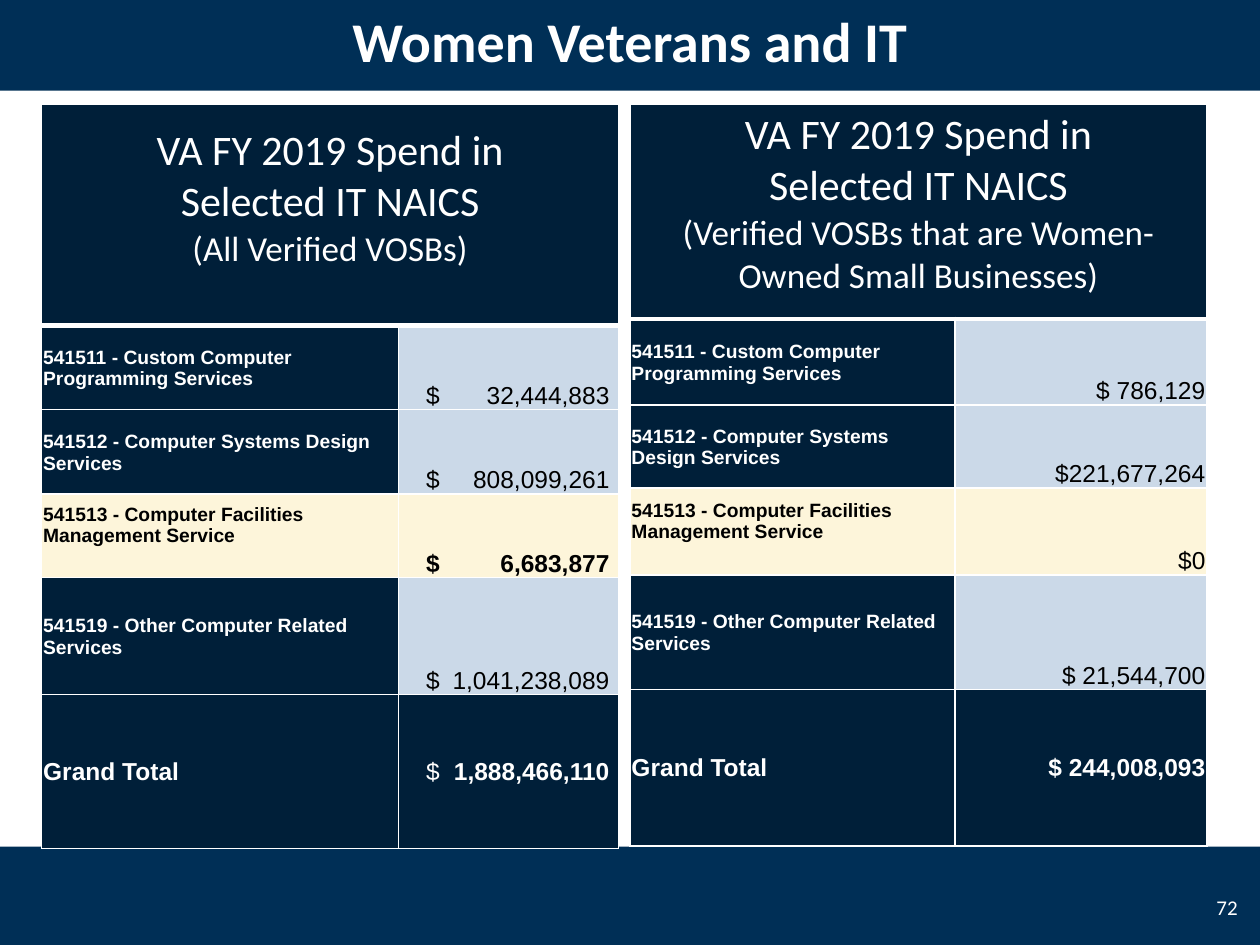
from lxml import etree
from pptx import Presentation
from pptx.dml.color import RGBColor
from pptx.enum.shapes import MSO_SHAPE
from pptx.enum.text import MSO_ANCHOR, PP_ALIGN
from pptx.oxml.ns import qn
from pptx.util import Cm, Pt

BAND = RGBColor(0x00, 0x2F, 0x56)
NAVY = RGBColor(0x00, 0x1F, 0x39)
PALE = RGBColor(0xCB, 0xD9, 0xE8)
CREAM = RGBColor(0xFD, 0xF5, 0xDA)
WHITE = RGBColor(0xFF, 0xFF, 0xFF)
BLACK = RGBColor(0x00, 0x00, 0x00)

RECTANGLE = MSO_SHAPE.RECTANGLE
LEFT, CENTER, RIGHT = PP_ALIGN.LEFT, PP_ALIGN.CENTER, PP_ALIGN.RIGHT
TOP, MIDDLE, BOTTOM = MSO_ANCHOR.TOP, MSO_ANCHOR.MIDDLE, MSO_ANCHOR.BOTTOM

SLIDE_WIDTH, SLIDE_HEIGHT = 25.4, 19.05
BAND_HEIGHT = 2.03
TITLE_TOP = -0.2
TABLE_TOP = 2.11

LABELS = [
    "541511 - Custom Computer Programming Services",
    "541512 - Computer Systems Design Services",
    "541513 - Computer Facilities Management Service",
    "541519 - Other Computer Related Services",
    "Grand Total",
]
HIGHLIGHT_ROW, TOTAL_ROW = 3, 5


class SpendPage:
    heading_font = "Calibri"
    body_font = "Arial"

    def __init__(self, deck):
        self.page = deck.slides.add_slide(deck.slide_layouts[6])

    def band(self, top):
        shape = self.page.shapes.add_shape(
            RECTANGLE, 0, Cm(top), Cm(SLIDE_WIDTH), Cm(BAND_HEIGHT))
        shape.shadow.inherit = False
        shape.fill.solid()
        shape.fill.fore_color.rgb = BAND
        shape.line.fill.background()

    def styled_run(self, para, text, size, font, color, bold=False):
        run = para.add_run()
        run.text = text
        run.font.size = Pt(size)
        run.font.name = font
        run.font.bold = bold
        run.font.color.rgb = color

    def text(self, place, text, size, align, bold=False):
        box = self.page.shapes.add_textbox(*(Cm(length) for length in place))
        frame = box.text_frame
        frame.word_wrap = True
        frame.vertical_anchor = MIDDLE
        para = frame.paragraphs[0]
        para.alignment = align
        self.styled_run(para, text, size, self.heading_font, WHITE, bold)

    def style_cell(self, cell, fill, anchor, margins, bottom_border=1):
        """Margins are left, top, right and bottom, in centimetres."""
        cell.vertical_anchor = anchor
        (cell.margin_left, cell.margin_top,
         cell.margin_right, cell.margin_bottom) = (Cm(m) for m in margins)
        properties = cell._tc.get_or_add_tcPr()
        for side in ("lnL", "lnR", "lnT", "lnB"):
            width = bottom_border if side == "lnB" else 1
            line = etree.SubElement(properties, qn("a:" + side), w=str(Pt(width)))
            solid = etree.SubElement(line, qn("a:solidFill"))
            etree.SubElement(solid, qn("a:srgbClr"), val=str(WHITE))
        cell.fill.solid()
        cell.fill.fore_color.rgb = fill

    def header(self, table, lines, anchor, bottom_margin):
        first, last = table.cell(0, 0), table.cell(0, 1)
        first.merge(last)
        for cell in (first, last):
            self.style_cell(cell, NAVY, anchor, (0.18, 0.1, 0.18, bottom_margin), 3)
        frame = first.text_frame
        for index, (line, size) in enumerate(zip(lines, (24, 24, 20))):
            para = frame.add_paragraph() if index else frame.paragraphs[0]
            para.alignment = CENTER
            self.styled_run(para, line, size, self.heading_font, WHITE)

    def label(self, cell, text, row):
        highlighted = row == HIGHLIGHT_ROW
        self.style_cell(cell, CREAM if highlighted else NAVY, MIDDLE,
                        (0.03, 0.03, 0.03, 0.44 if highlighted else 0))
        self.styled_run(cell.text_frame.paragraphs[0], text,
                        14 if row == TOTAL_ROW else 11, self.body_font,
                        BLACK if highlighted else WHITE, True)

    def amount(self, cell, runs, row, tab):
        """Runs are (text, bold) pairs; a tab in cm sets the figures apart."""
        fill = {HIGHLIGHT_ROW: CREAM, TOTAL_ROW: NAVY}.get(row, PALE)
        self.style_cell(cell, fill, MIDDLE if row == TOTAL_ROW else BOTTOM,
                        (0.56 if tab else 0.03, 0.03, 0.03, 0))
        para = cell.text_frame.paragraphs[0]
        para.alignment = LEFT if tab else RIGHT
        if tab:
            stops = etree.SubElement(para._p.get_or_add_pPr(), qn("a:tabLst"))
            etree.SubElement(stops, qn("a:tab"), pos=str(Cm(tab)), algn="r")
        color = WHITE if row == TOTAL_ROW else BLACK
        for text, bold in runs:
            self.styled_run(para, text, 14, self.body_font, color, bold)

    def table(self, left, widths, heights, header, amounts, tab=None):
        table = self.page.shapes.add_table(
            len(heights), len(widths), Cm(left), Cm(TABLE_TOP),
            Cm(sum(widths)), Cm(sum(heights))).table
        table.first_row = table.horz_banding = False
        for column, width in zip(table.columns, widths):
            column.width = Cm(width)
        for row, height in zip(table.rows, heights):
            row.height = Cm(height)
        self.header(table, *header)
        for row, (label, runs) in enumerate(zip(LABELS, amounts), start=1):
            self.label(table.cell(row, 0), label, row)
            self.amount(table.cell(row, 1), runs, row, tab)


def main():
    deck = Presentation()
    deck.slide_width, deck.slide_height = Cm(SLIDE_WIDTH), Cm(SLIDE_HEIGHT)
    page = SpendPage(deck)
    page.band(17.07)
    page.band(TITLE_TOP)
    page.text((24.13, 17.78, 1.07, 1.02), "72", 12, RIGHT)
    page.text((0, TITLE_TOP, SLIDE_WIDTH, BAND_HEIGHT),
              "Women Veterans and IT", 32, CENTER, True)
    page.table(
        12.7, (6.55, 5.08), (4.32, 1.73, 1.68, 1.75, 2.31, 3.15),
        (["VA FY 2019 Spend in", "Selected IT NAICS",
          "(Verified VOSBs that are Women-Owned Small Businesses)"], TOP, 0.1),
        [[("$ 786,129", False)],
         [("$221,677,264", False)],
         [("$0", False)],
         [("$ 21,544,700", False)],
         [("$ 244,008,093", True)]])
    page.table(
        0.84, (7.19, 4.44), (4.45, 1.7, 1.7, 1.68, 2.36, 3.1),
        (["VA FY 2019 Spend in", "Selected IT NAICS",
          "(All Verified VOSBs)"], BOTTOM, 1.1),
        [[("$\t32,444,883", False)],
         [("$\t808,099,261", False)],
         [("$\t6,683,877", True)],
         [("$\t1,041,238,089", False)],
         [("$\t", False), ("1,888,466,110", True)]],
        tab=3.7)
    deck.save("out.pptx")


if __name__ == "__main__":
    main()
